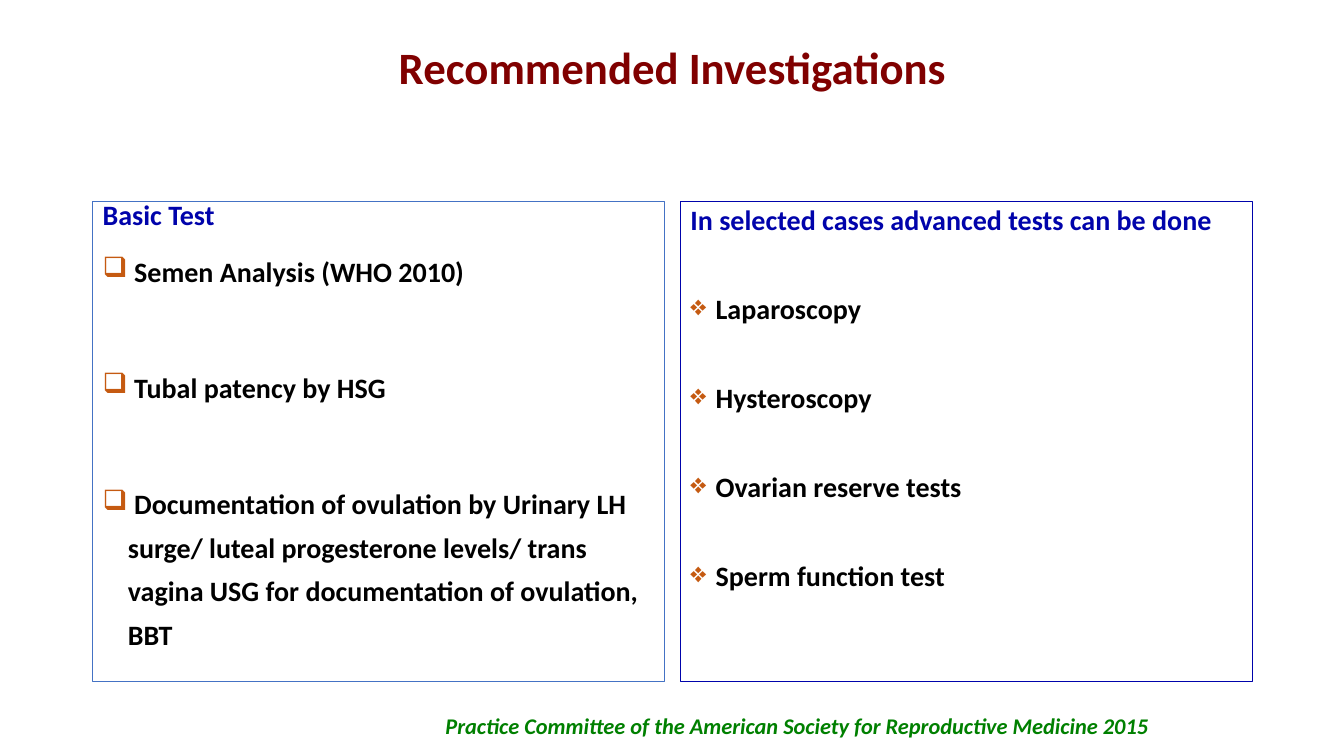
from lxml import etree
from pptx import Presentation
from pptx.dml.color import RGBColor
from pptx.enum import shapes, text
from pptx.oxml.ns import qn
from pptx.util import Inches, Pt

MAROON = RGBColor(0x80, 0, 0)
NAVY = RGBColor(0, 0x03, 0xAB)
BLUE = RGBColor(0x44, 0x72, 0xC4)
RUST = RGBColor(0xC5, 0x5A, 0x11)
GREEN = RGBColor(0, 0x80, 0)
BLACK = RGBColor(0, 0, 0)

TITLE = "Recommended Investigations"
SOURCE = "Practice Committee of the American Society for Reproductive Medicine 2015"
# gaps: points before the first item and before each later item
PANELS = [
    dict(head="Basic Test", edge=BLUE, mark="❑", lead=0.7, pitch=1.3,
         gaps=(10, 51.8),
         items=[" Semen Analysis (WHO 2010)",
                " Tubal patency by HSG",
                " Documentation of ovulation by Urinary LH surge/ luteal "
                "progesterone levels/ trans vagina USG for documentation "
                "of ovulation, BBT"]),
    dict(head="In selected cases advanced tests can be done", edge=NAVY,
         mark="❖", lead=0.9, pitch=0.9, gaps=(42, 42),
         items=["Laparoscopy", "Hysteroscopy", "Ovarian reserve tests",
                "Sperm function test"]),
]
LEFT, TOP, WIDE, HIGH, STEP = 0.92, 2, 5.67, 4.76, 5.83


def style(para, words, size, color, **form):
    para.text = words
    for key, val in form.items():
        setattr(para, key, val)
    font = para.font
    for key, val in dict(name="Calibri", size=Pt(size), bold=True).items():
        setattr(font, key, val)
    font.color.rgb = color


def bullet(para, mark):
    props = para._p.get_or_add_pPr()
    props.set("marL", str(Inches(0.25)))
    props.set("indent", str(-Inches(0.25)))
    tint = etree.SubElement(props, qn("a:buClr"))
    etree.SubElement(tint, qn("a:srgbClr"), val=str(RUST))
    etree.SubElement(props, qn("a:buChar"), char=mark)


def label(slide, box, words, size, color, **form):
    frame = slide.shapes.add_textbox(*map(Inches, box)).text_frame
    frame.word_wrap = True
    style(frame.paragraphs[0], words, size, color, **form)
    return frame.paragraphs[0]


def panel(slide, left, data):
    box = slide.shapes.add_shape(
        shapes.MSO_SHAPE.RECTANGLE, *map(Inches, (left, TOP, WIDE, HIGH)))
    box.shadow.inherit = False
    box.fill.background()
    box.line.color.rgb = data["edge"]
    box.line.width = Pt(0.75)
    frame = box.text_frame
    frame.word_wrap = True
    frame.vertical_anchor = text.MSO_ANCHOR.TOP
    side = text.PP_ALIGN.LEFT
    style(frame.paragraphs[0], data["head"], 20, NAVY,
          alignment=side, line_spacing=data["lead"])
    for i, item in enumerate(data["items"]):
        para = frame.add_paragraph()
        bullet(para, data["mark"])
        style(para, item, 20, BLACK, alignment=side,
              line_spacing=data["pitch"],
              space_before=Pt(data["gaps"][min(i, 1)]))


def main():
    deck = Presentation()
    deck.slide_width, deck.slide_height = Inches(13.33), Inches(7.5)
    slide = deck.slides.add_slide(deck.slide_layouts[6])
    label(slide, (LEFT, 0.4, 11.5, 1.45), TITLE, 32, MAROON,
          alignment=text.PP_ALIGN.CENTER, line_spacing=0.9)
    for i, data in enumerate(PANELS):
        panel(slide, LEFT + i * STEP, data)
    note = label(slide, (4.32, 7.02, 7.54, 0.37), SOURCE, 16, GREEN)
    note.font.italic = True
    deck.save("out.pptx")


if __name__ == "__main__":
    main()
